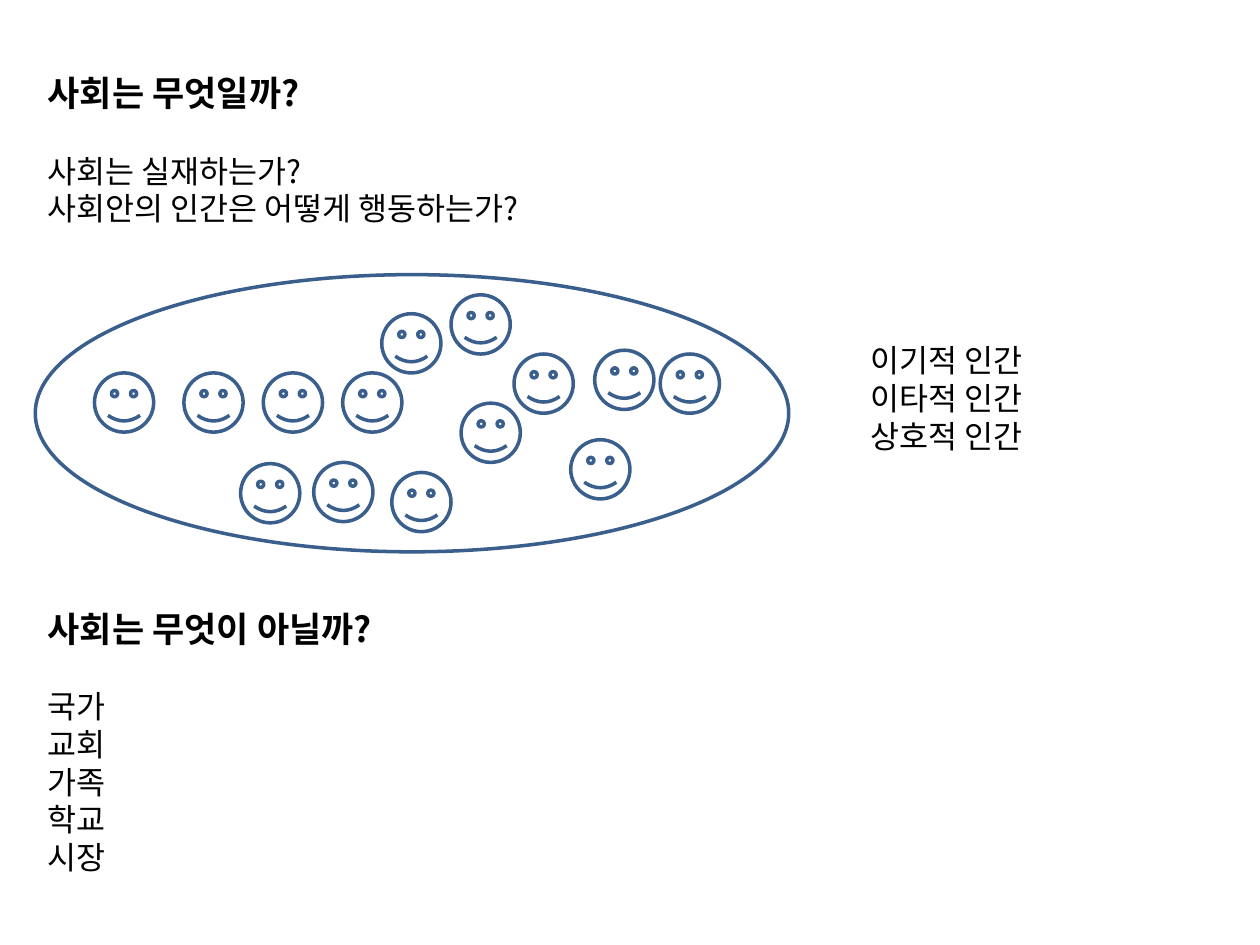
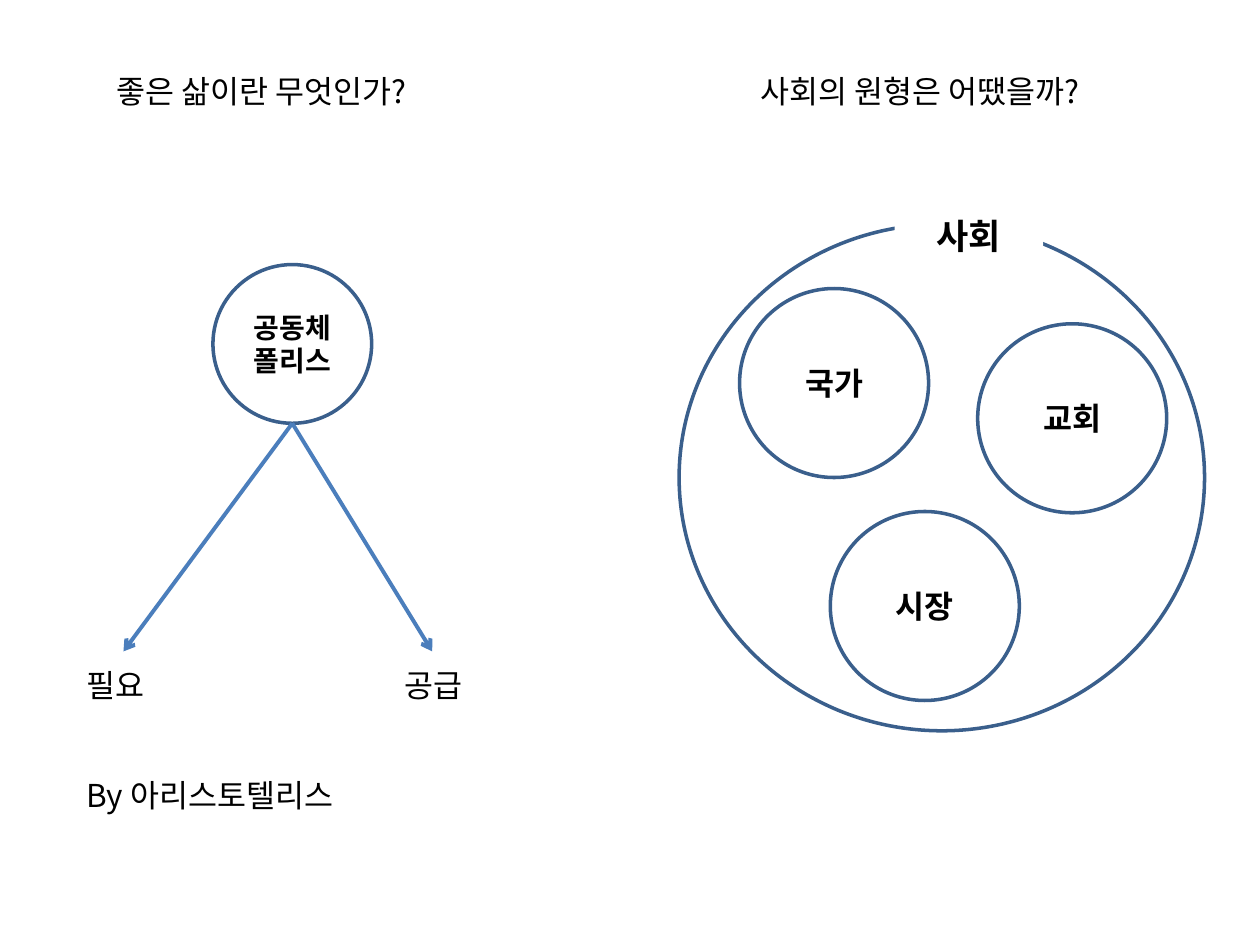
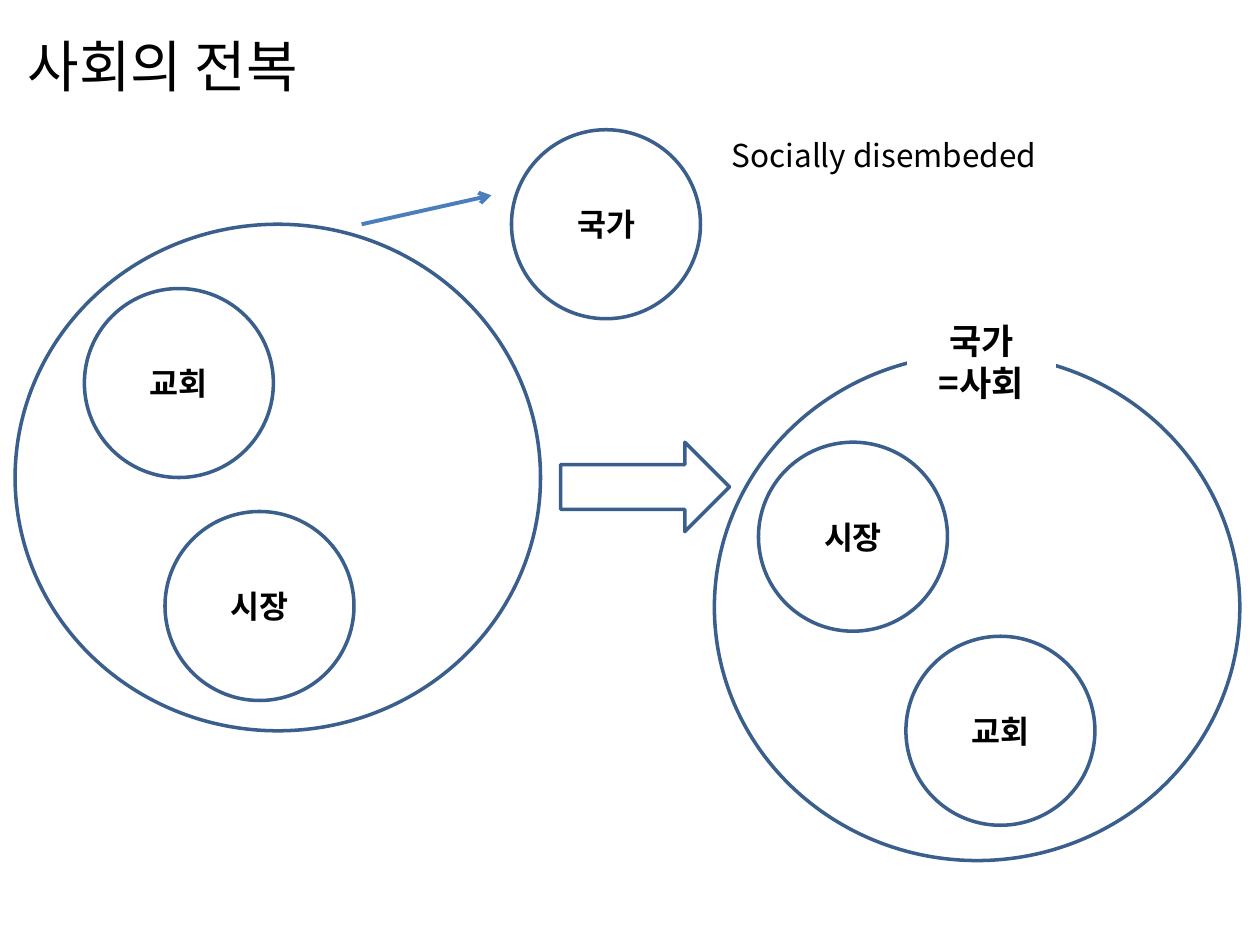
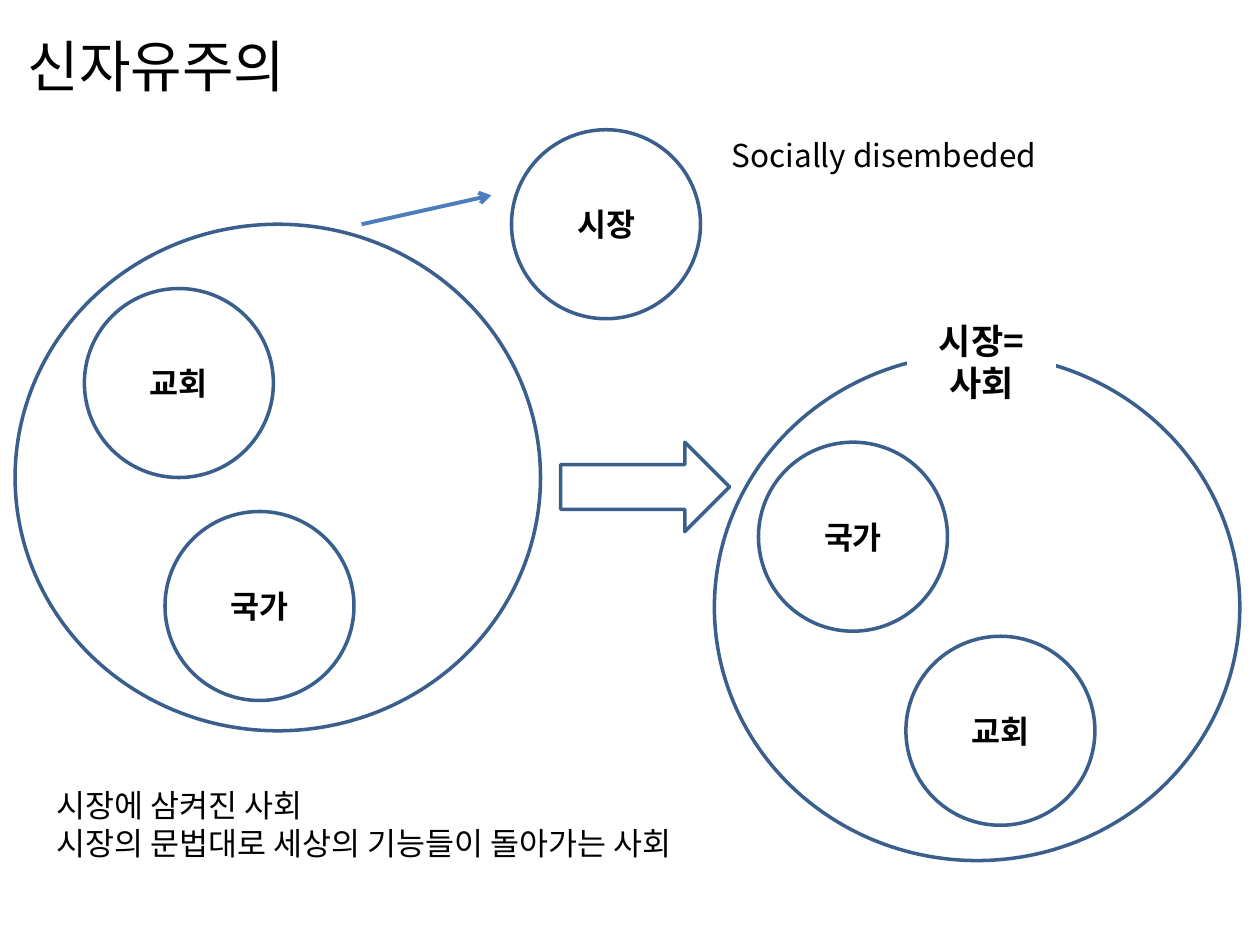
from pptx import Presentation
from pptx.dml.color import RGBColor as Rgb
from pptx.enum.shapes import MSO_CONNECTOR as Link, MSO_SHAPE as Kind
from pptx.enum.text import MSO_ANCHOR as Anchor, MSO_AUTO_SIZE as Fit, PP_ALIGN as Align
from pptx.oxml.ns import qn
from pptx.util import Inches, Pt
from lxml.etree import SubElement as sub

HUES = {"ink": "000000", "edge": "3A5F8C", "arrow": "4B7EBC", "paper": "FFFFFF"}
FACE = "Noto Sans CJK KR"
BODY = {"size": Pt(18), "bold": False}
BOLD = {"size": Pt(18), "bold": True}
HEAD = {"size": Pt(20), "bold": True}
SMALL = {"size": Pt(16), "bold": True}
TITLE = {"size": Pt(32), "bold": False}

# Grid of 100 columns by 75 rows
deck = Presentation()
deck.slide_width, deck.slide_height = Inches(10), Inches(7.5)
COL, ROW = deck.slide_width / 100, deck.slide_height / 75
DISC = 15  # side of a member circle
WORLD = (41.7, 40.2)  # size of a society circle


def cells(x, y, w, h):
    return round(x * COL), round(y * ROW), round(w * COL), round(h * ROW)


def hue(name):
    return Rgb.from_string(HUES[name])


# ---- Shared parts ----
def write(frame, lines, form, align=Align.LEFT):
    for i, line in enumerate(lines):
        par = frame.paragraphs[0] if i == 0 else frame.add_paragraph()
        par.alignment = align
        run = par.add_run()
        run.text = line
        for key, val in form.items():
            setattr(run.font, key, val)
        run.font.color.rgb = hue("ink")
        run.font.name = FACE
        sub(run.font._element, qn("a:ea"), typeface=FACE)


def note(slide, box, lines, form=BODY):
    frame = slide.shapes.add_textbox(*cells(*box)).text_frame
    frame.word_wrap = True
    frame.auto_size = Fit.SHAPE_TO_FIT_TEXT
    write(frame, lines, form)
    return frame


def outline(shapes, kind, box, lines=(), form=BOLD):
    shape = shapes.add_shape(kind, *cells(*box))
    shape.shadow.inherit = False
    shape.fill.background()
    shape.line.color.rgb = hue("edge")
    shape.line.width = Pt(2)
    frame = shape.text_frame
    frame.word_wrap = False
    frame.vertical_anchor = Anchor.MIDDLE
    write(frame, lines, form, Align.CENTER)


def label(slide, box, lines):
    shape = slide.shapes.add_shape(Kind.RECTANGLE, *cells(*box))
    shape.shadow.inherit = False
    shape.fill.solid()
    shape.fill.fore_color.rgb = hue("paper")
    shape.line.fill.background()
    frame = shape.text_frame
    frame.word_wrap = True
    frame.auto_size = Fit.SHAPE_TO_FIT_TEXT
    frame.vertical_anchor = Anchor.TOP
    write(frame, lines, HEAD, Align.CENTER)


def arrow(slide, start, end):
    x1, y1, x2, y2 = cells(*start, *end)
    line = slide.shapes.add_connector(Link.STRAIGHT, x1, y1, x2, y2)
    line.line.color.rgb = hue("arrow")
    line.line.width = Pt(2.25)
    sub(line.line._get_or_add_ln(), qn("a:tailEnd"), type="arrow")
    sub(line._element.spPr, qn("a:effectLst"))


def society(slide, x, y, members):
    """Large circle at x, y; members maps a name to its offset inside."""
    outline(slide.shapes, Kind.OVAL, (x, y, *WORLD))
    for name, (dx, dy) in members.items():
        outline(slide.shapes, Kind.OVAL, (x + dx, y + dy, DISC, DISC), [name])


def blank():
    return deck.slides.add_slide(deck.slide_layouts[6])


# ---- Slide 1: what society is and is not ----
def block(slide, box, head, lines):
    frame = note(slide, box, [head], HEAD)
    rest = len(frame.paragraphs)
    for line in lines:
        frame.add_paragraph()
    for par, line in zip(frame.paragraphs[rest:], lines):
        run = par.add_run()
        run.text = line
        run.font.size, run.font.name = Pt(18), FACE
        run.font.color.rgb = hue("ink")
        sub(run.font._element, qn("a:ea"), typeface=FACE)
    frame.paragraphs[rest].space_before = Pt(21.6)


def crowd(slide, x, y):
    """Ellipse of people, each offset from its corner."""
    spots = [(4.7, 7.8), (11.8, 7.8), (18.1, 7.8), (24.4, 7.8), (27.5, 3.1),
             (33.8, 10.2), (38, 6.3), (16.3, 15), (22.1, 14.9), (28.3, 15.7),
             (42.5, 13.1), (49.6, 6.3), (33, 1.6), (44.4, 6)]
    group = slide.shapes.add_group_shape().shapes
    outline(group, Kind.OVAL, (x, y, 59.8, 22))
    for dx, dy in spots:
        outline(group, Kind.SMILEY_FACE, (x + dx, y + dy, 4.7, 4.7))


def intro():
    slide = blank()
    block(slide, (2.8, 5.2, 92.9, 13.5), "사회는 무엇일까?",
          ["사회는 실재하는가?", "사회안의 인간은 어떻게 행동하는가?"])
    block(slide, (2.8, 47.7, 92.9, 22.6), "사회는 무엇이 아닐까?",
          ["국가", "교회", "가족", "학교", "시장"])
    crowd(slide, 2.8, 21.8)
    note(slide, (68.1, 26.6, 21.3, 10.1), ["이기적 인간", "이타적 인간", "상호적 인간"])


# ---- Slide 2: polis and the first form of society ----
def polis(slide, x, y):
    """Circle at x, y with two arrows to what it gives rise to."""
    side = 12.6
    outline(slide.shapes, Kind.OVAL, (x, y, side, side), ["공동체", "폴리스"], SMALL)
    foot = (x + side / 2, y + side)
    for name, tip, left in (("필요", -7.1, -11), ("공급", 17.4, 14.2)):
        arrow(slide, foot, (x + tip, y + 30.7))
        note(slide, (x + left, y + 31.4, side, 4), [name])


def origin():
    slide = blank()
    society(slide, 53.9, 17.8, {"국가": (4.8, 5.1), "교회": (23.7, 7.9), "시장": (12, 22.8)})
    label(slide, (71, 16.5, 11.8, 4.4), ["사회"])
    note(slide, (8.3, 5.2, 28.3, 4), ["좋은 삶이란 무엇인가?"])
    note(slide, (59.4, 5.2, 40.6, 4), ["사회의 원형은 어땠을까?"])
    polis(slide, 16.9, 21)
    note(slide, (5.9, 61.1, 40.2, 4), ["By 아리스토텔리스"])


# ---- Slides 3 and 4: one member leaves and takes over ----
def upset(title, inner, gone, after, name):
    slide = deck.slides.add_slide(deck.slide_layouts[5])
    head = slide.shapes.title
    head.left, head.top, head.width, head.height = cells(1.2, -1.1, 90, 12.5)
    head.text_frame.vertical_anchor = Anchor.MIDDLE
    write(head.text_frame, [title], TITLE)

    society(slide, 1.2, 17.8, dict(zip(inner, [(5.5, 5.1), (11.9, 22.8)])))
    outline(slide.shapes, Kind.OVAL, (40.6, 10.3, DISC, DISC), [gone])
    arrow(slide, (28.7, 17.8), (39, 15.5))
    note(slide, (57.1, 10.3, 45.7, 4), ["Socially disembeded"])
    outline(slide.shapes, Kind.RIGHT_ARROW, (44.5, 35.1, 13.4, 7.1))
    society(slide, 56.7, 28.1, dict(zip(after, [(3.5, 7), (15.2, 22.4)])))
    label(slide, (72, 24.9, 11.8, 7.7), name)
    return slide


def main():
    intro()
    origin()
    upset("사회의 전복", ["교회", "시장"], "국가", ["시장", "교회"], ["국가", "=사회"])
    last = upset("신자유주의", ["교회", "국가"], "시장", ["국가", "교회"], ["시장=사회"])
    note(last, (3.5, 61.9, 56.7, 7.1),
         ["시장에 삼켜진 사회", "시장의 문법대로 세상의 기능들이 돌아가는 사회"])
    deck.save("out.pptx")


if __name__ == "__main__":
    main()
